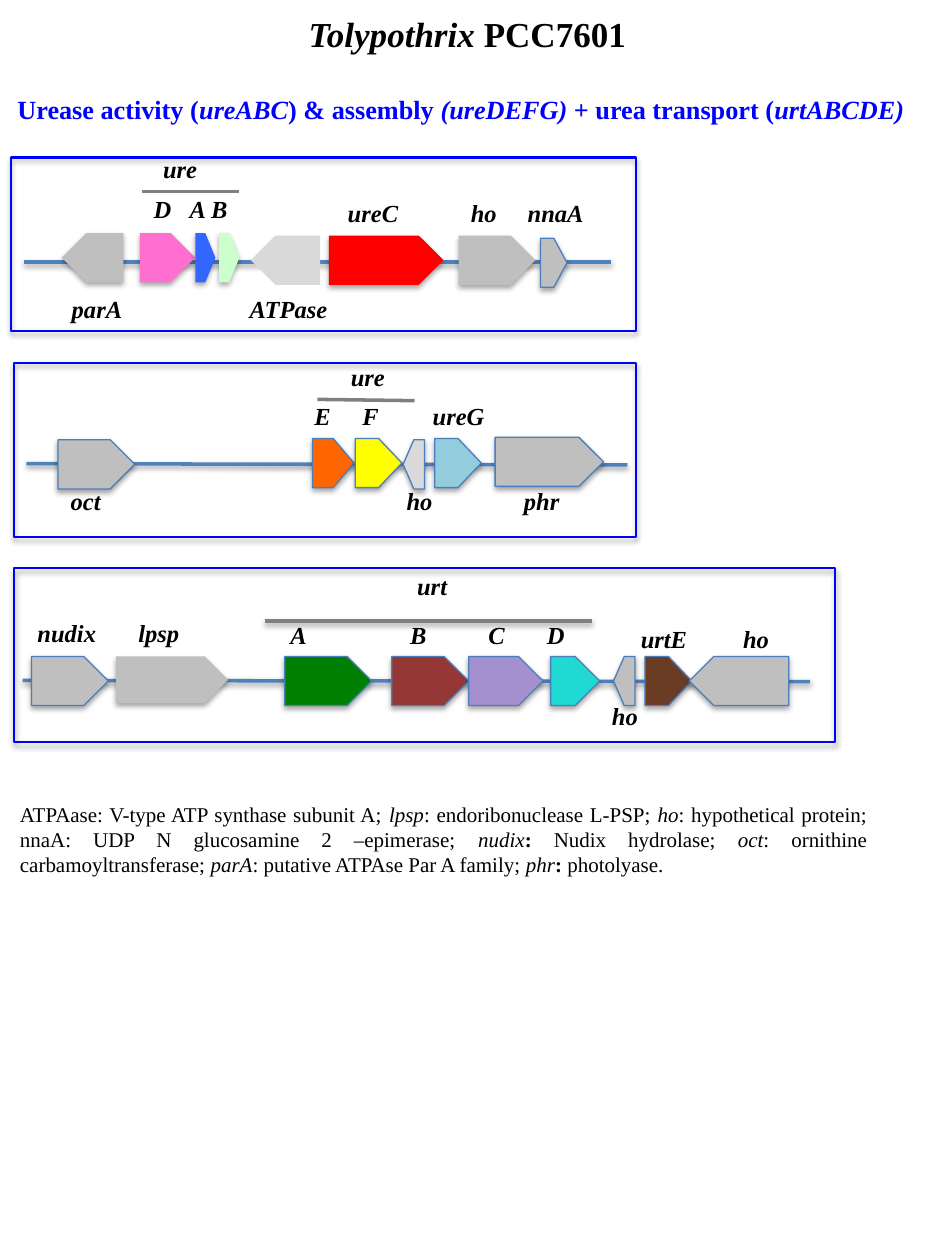
from dataclasses import dataclass

from lxml import etree
from pptx import Presentation
from pptx.dml.color import RGBColor
from pptx.enum.shapes import MSO_CONNECTOR, MSO_SHAPE
from pptx.enum.text import MSO_ANCHOR, PP_ALIGN
from pptx.oxml.ns import qn
from pptx.util import Inches, Pt

STRAIGHT = MSO_CONNECTOR.STRAIGHT
PENTAGON, RECTANGLE = MSO_SHAPE.PENTAGON, MSO_SHAPE.RECTANGLE
LEFT, CENTER, JUSTIFY = PP_ALIGN.LEFT, PP_ALIGN.CENTER, PP_ALIGN.JUSTIFY
TOP, MIDDLE = MSO_ANCHOR.TOP, MSO_ANCHOR.MIDDLE

FONT = "Times New Roman"
GENE_HEIGHT = 0.39
LABEL_HEIGHT = 0.24
COLORS = {
    "black": "000000", "frame": "0000FF", "strand": "4F81BD",
    "bracket": "808080", "outline": "4B7EBC", "grey": "BFBFBF",
    "light grey": "D9D9D9", "pink": "FF6FCF", "blue": "3366FF",
    "mint": "CCFFCC", "red": "FF0000", "orange": "FF6600",
    "yellow": "FFFF00", "sky": "93CDDD", "green": "008000",
    "maroon": "953735", "violet": "A490CF", "cyan": "20D9D3",
    "brown": "693C23",
}


@dataclass
class Gene:
    left: float
    top: float
    width: float
    color: str = "grey"
    outlined: bool = True
    reverse: bool = False
    shadow: bool = True
    height: float = GENE_HEIGHT


# Each cluster: frame (left, top, width), strand and bracket (x1, y1, x2, y2),
# genes, and labels by row: centre height -> (text, centre) pairs
CLUSTERS = [
    {
        "frame": (0.09, 1.25, 4.96),
        "strand": (0.19, 2.08, 4.85, 2.08),
        "bracket": (1.13, 1.52, 1.9, 1.52),
        "bracket_shadow": False,
        "genes": [
            Gene(0.49, 1.85, 0.49, outlined=False, reverse=True),
            Gene(1.11, 1.85, 0.44, "pink", outlined=False),
            Gene(1.55, 1.85, 0.16, "blue", outlined=False),
            Gene(1.74, 1.85, 0.16, "mint", outlined=False),
            Gene(1.99, 1.87, 0.55, "light grey", outlined=False,
                 reverse=True, shadow=False),
            Gene(2.61, 1.87, 0.91, "red", outlined=False),
            Gene(3.64, 1.87, 0.61, outlined=False),
            Gene(4.29, 1.89, 0.21),
        ],
        "labels": {
            1.34: [("ure", 1.43)],
            1.66: [("D", 1.29), ("A", 1.57), ("B", 1.74)],
            1.69: [("ureC", 2.96), ("ho", 3.84), ("nnaA", 4.41)],
            2.45: [("parA", 0.77), ("ATPase", 2.29)],
        },
    },
    {
        "frame": (0.11, 2.88, 4.94),
        "strand": (0.21, 3.68, 4.98, 3.69),
        "bracket": (2.52, 3.17, 3.29, 3.18),
        "bracket_shadow": False,
        "genes": [
            Gene(0.46, 3.49, 0.61),
            Gene(2.48, 3.48, 0.33, "orange"),
            Gene(2.82, 3.48, 0.37, "yellow"),
            Gene(3.2, 3.49, 0.17, "light grey", reverse=True),
            Gene(3.45, 3.48, 0.37, "sky"),
            Gene(3.93, 3.47, 0.86),
        ],
        "labels": {
            2.99: [("ure", 2.92)],
            3.3: [("E", 2.56), ("F", 2.94), ("ureG", 3.64)],
            3.97: [("oct", 0.68), ("ho", 3.33), ("phr", 4.3)],
        },
    },
    {
        "frame": (0.11, 4.51, 6.52),
        "strand": (0.18, 5.4, 6.43, 5.41),
        "bracket": (2.1, 4.93, 4.7, 4.93),
        "bracket_shadow": True,
        "genes": [
            Gene(0.25, 5.21, 0.61),
            Gene(0.92, 5.21, 0.89, outlined=False, height=0.37),
            Gene(2.26, 5.21, 0.69, "green"),
            Gene(3.11, 5.21, 0.61, "maroon"),
            Gene(3.72, 5.21, 0.59, "violet"),
            Gene(4.37, 5.21, 0.39, "cyan"),
            Gene(4.87, 5.21, 0.17, reverse=True),
            Gene(5.12, 5.21, 0.37, "brown"),
            Gene(5.47, 5.21, 0.79, reverse=True),
        ],
        "labels": {
            4.65: [("urt", 3.43)],
            5.02: [("nudix", 0.53), ("lpsp", 1.26)],
            5.04: [("A", 2.37), ("B", 3.32), ("C", 3.94), ("D", 4.41)],
            5.07: [("urtE", 5.27), ("ho", 6.0)],
            5.68: [("ho", 4.96)],
        },
    },
]

# Styled text: (wording, style letters), b for bold and i for italic
TITLE = [("Tolypothrix ", "bi"), ("PCC7601", "b")]
SUBTITLE = [
    ("Urease activity (", "b"), ("ureABC", "bi"), (") & assembly ", "b"),
    ("(ureDEFG) ", "bi"), ("+ urea transport (", "b"), ("urtABCDE)", "bi"),
]
LEGEND = [
    ("ATPAase: V-type ATP synthase subunit A; ", ""), ("lpsp", "i"),
    (": endoribonuclease L-PSP; ", ""), ("ho", "i"),
    (": hypothetical protein; nnaA: UDP N glucosamine 2 –epimerase; ", ""),
    ("nudix", "i"), (": ", "b"), ("Nudix hydrolase; ", ""), ("oct", "i"),
    (": ornithine carbamoyltransferase; ", ""), ("parA", "i"),
    (": putative ATPAse Par A family; ", ""), ("phr", "i"), (": ", "b"),
    ("photolyase.", ""),
]


def rgb(name):
    return RGBColor.from_string(COLORS[name])


def set_shadow(element, visible=True, opacity=35, distance=1.8):
    """Give a shape or connector a soft shadow below it, or none."""
    effects = etree.SubElement(element.spPr, qn("a:effectLst"))
    if visible:
        shadow = etree.SubElement(
            effects, qn("a:outerShdw"), blurRad=str(Pt(3.1)),
            dist=str(Pt(distance)), dir="5400000", rotWithShape="0")
        color = etree.SubElement(shadow, qn("a:srgbClr"), val=COLORS["black"])
        etree.SubElement(color, qn("a:alpha"), val=str(opacity * 1000))


def add_text(page, place, runs, size, color="black", align=LEFT,
             wrap=True, inset=(0.1, 0.05), anchor=TOP):
    box = page.shapes.add_textbox(*map(Inches, place))
    frame = box.text_frame
    frame.word_wrap = wrap
    frame.vertical_anchor = anchor
    frame.margin_left = frame.margin_right = Inches(inset[0])
    frame.margin_top = frame.margin_bottom = Inches(inset[1])
    para = frame.paragraphs[0]
    para.alignment = align
    for text, style in runs:
        span = para.add_run()
        span.text = text
        span.font.name, span.font.size = FONT, Pt(size)
        span.font.bold, span.font.italic = "b" in style, "i" in style
        span.font.color.rgb = rgb(color)


def add_label(page, text, center, middle):
    width = 0.11 * len(text) + 0.1
    place = (center - width / 2, middle - LABEL_HEIGHT / 2, width, LABEL_HEIGHT)
    add_text(page, place, [(text, "bi")], 14, align=CENTER, wrap=False,
             inset=(0, 0), anchor=MIDDLE)


def add_line(page, ends, color, shadow):
    line = page.shapes.add_connector(STRAIGHT, *map(Inches, ends))
    line.line.color.rgb = rgb(color)
    line.line.width = Pt(2)
    set_shadow(line._element, shadow, opacity=38, distance=1.6)


def add_gene(page, gene):
    place = (gene.left, gene.top, gene.width, gene.height)
    arrow = page.shapes.add_shape(PENTAGON, *map(Inches, place))
    arrow.fill.solid()
    arrow.fill.fore_color.rgb = rgb(gene.color)
    if gene.outlined:
        arrow.line.color.rgb = rgb("outline")
        arrow.line.width = Pt(0.75)
    else:
        arrow.line.fill.background()
    if gene.reverse:
        arrow._element.spPr.xfrm.set("flipH", "1")
    set_shadow(arrow._element, gene.shadow)


def add_frame(page, left, top, width):
    frame = page.shapes.add_shape(RECTANGLE, *map(Inches, (left, top, width, 1.38)))
    frame.fill.background()
    frame.line.color.rgb = rgb("frame")
    frame.line.width = Pt(1.25)
    set_shadow(frame._element)


def add_cluster(page, cluster):
    add_line(page, cluster["strand"], "strand", True)
    add_line(page, cluster["bracket"], "bracket", cluster["bracket_shadow"])
    for gene in cluster["genes"]:
        add_gene(page, gene)
    for middle, labels in cluster["labels"].items():
        for text, center in labels:
            add_label(page, text, center, middle)
    add_frame(page, *cluster["frame"])


def main():
    deck = Presentation()
    deck.slide_width, deck.slide_height = Inches(7.5), Inches(10)
    page = deck.slides.add_slide(deck.slide_layouts[6])
    # Headings
    add_text(page, (-0.04, 0.05, 7.5, 0.44), TITLE, 20, align=CENTER)
    add_text(page, (0.04, 0.69, 7.36, 0.35), SUBTITLE, 15, "frame", wrap=False)
    # Gene clusters
    for cluster in CLUSTERS:
        add_cluster(page, cluster)
    # Abbreviations
    add_text(page, (0.06, 6.31, 6.92, 1.11), LEGEND, 12, align=JUSTIFY)
    deck.save("out.pptx")


if __name__ == "__main__":
    main()
